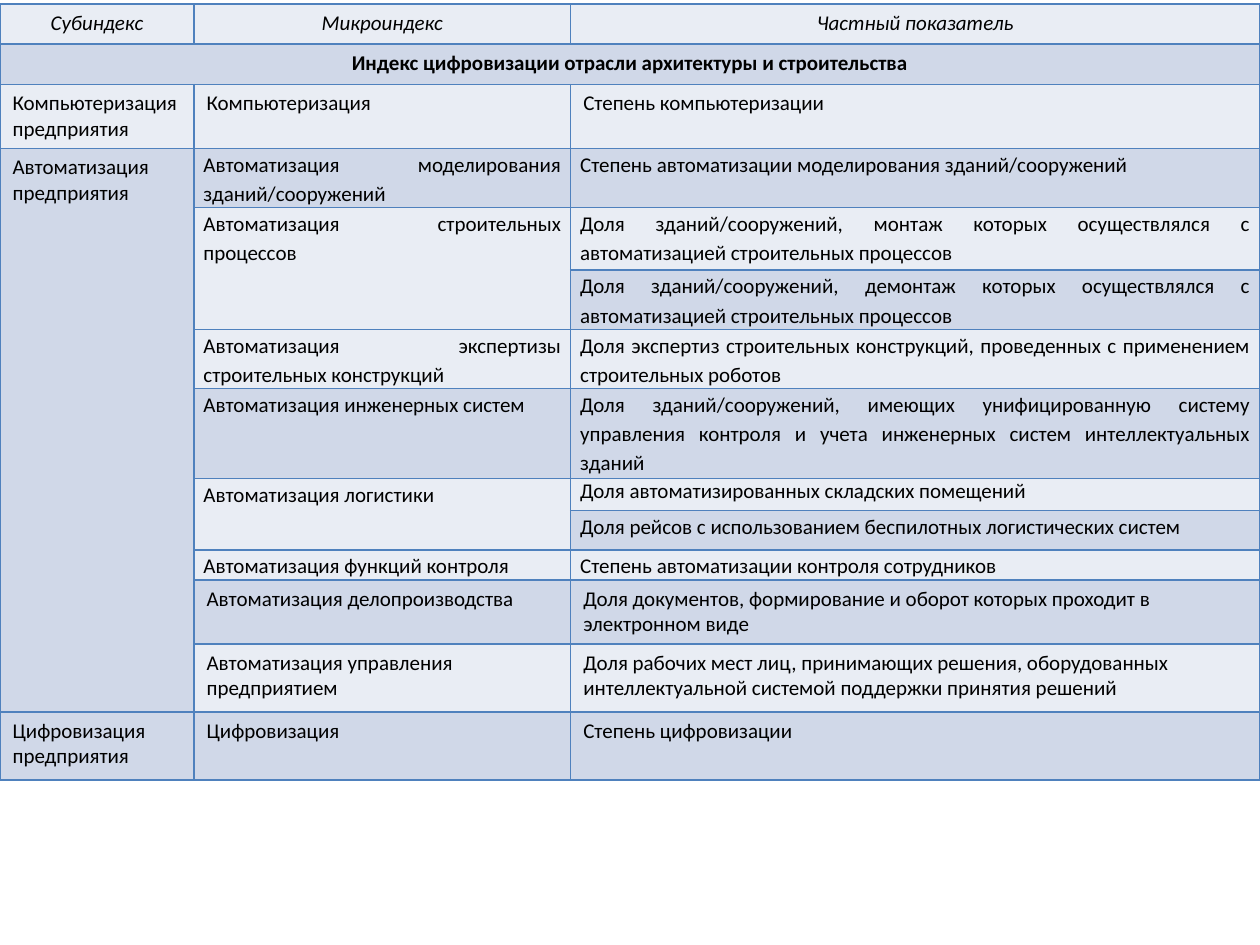
from dataclasses import dataclass
from typing import Optional

import pptx
import pptx.dml.color
import pptx.enum.text
import pptx.oxml
import pptx.oxml.ns
import pptx.util

Pt = pptx.util.Pt
ALIGN = pptx.enum.text.PP_ALIGN
COLORS = {"light": "E9EDF4", "dark": "D0D8E8", "border": "4F81BD", "text": "000000"}
COL_WIDTHS = [110.88, 215.28, 393.84]


@dataclass
class IndexRow:
    height: float
    texts: tuple[Optional[str], Optional[str], Optional[str]]  # None: covered by a merge
    compact: bool = False


ROWS = [
    IndexRow(23, ("Субиндекс", "Микроиндекс", "Частный показатель")),
    IndexRow(23.2, ("Индекс цифровизации отрасли архитектуры и строительства", None, None)),
    IndexRow(36.6, ("Компьютеризация предприятия", "Компьютеризация", "Степень компьютеризации")),
    IndexRow(33.4, ("Автоматизация предприятия", "Автоматизация моделирования зданий/сооружений",
                    "Степень автоматизации моделирования зданий/сооружений"), True),
    IndexRow(35.8, (None, "Автоматизация строительных процессов",
                    "Доля зданий/сооружений, монтаж которых осуществлялся с автоматизацией "
                    "строительных процессов"), True),
    IndexRow(33.8, (None, None,
                    "Доля зданий/сооружений, демонтаж которых осуществлялся с автоматизацией "
                    "строительных процессов"), True),
    IndexRow(33.7, (None, "Автоматизация экспертизы строительных конструкций",
                    "Доля экспертиз строительных конструкций, проведенных с применением "
                    "строительных роботов"), True),
    IndexRow(51.6, (None, "Автоматизация инженерных систем",
                    "Доля зданий/сооружений, имеющих унифицированную систему управления контроля "
                    "и учета инженерных систем интеллектуальных зданий"), True),
    IndexRow(18.4, (None, "Автоматизация логистики",
                    "Доля автоматизированных складских помещений"), True),
    IndexRow(22.4, (None, None,
                    "Доля рейсов с использованием беспилотных логистических систем"), True),
    IndexRow(17.2, (None, "Автоматизация функций контроля",
                    "Степень автоматизации контроля сотрудников"), True),
    IndexRow(36.4, (None, "Автоматизация делопроизводства",
                    "Доля документов, формирование и оборот которых проходит в электронном виде")),
    IndexRow(38.9, (None, "Автоматизация управления предприятием",
                    "Доля рабочих мест лиц, принимающих решения, оборудованных интеллектуальной "
                    "системой поддержки принятия решений")),
    IndexRow(38.9, ("Цифровизация предприятия", "Цифровизация", "Степень цифровизации")),
]
MERGES = [((1, 0), (1, 2)), ((3, 0), (12, 0)), ((4, 1), (5, 1)), ((8, 1), (9, 1))]
PLAIN_CELL = (8, 2)  # compact, but left-aligned with single spacing


def rgb(name: str) -> pptx.dml.color.RGBColor:
    return pptx.dml.color.RGBColor.from_string(COLORS[name])


def add_borders(cell) -> None:
    tc_pr = cell._tc.get_or_add_tcPr()
    for side in ("lnL", "lnR", "lnT", "lnB"):
        tc_pr.append(pptx.oxml.parse_xml(
            f'<a:{side} {pptx.oxml.ns.nsdecls("a")} w="{Pt(1)}"><a:solidFill>'
            f'<a:srgbClr val="{COLORS["border"]}"/></a:solidFill></a:{side}>'))


def fill_cell(cell, row: IndexRow, i: int, j: int) -> None:
    add_borders(cell)
    cell.fill.solid()
    cell.fill.fore_color.rgb = rgb("dark" if i % 2 else "light")
    compact = row.compact and j > 0
    cell.margin_left = cell.margin_right = Pt(5.4 if compact else 7.2)
    cell.margin_top = cell.margin_bottom = Pt(0 if compact else 3.6)
    if row.texts[j] is None:
        return

    p = cell.text_frame.paragraphs[0]
    p.text = row.texts[j]
    if i < 2:
        p.alignment = ALIGN.CENTER
    elif compact and (i, j) != PLAIN_CELL:
        p.alignment = ALIGN.JUSTIFY
        p.line_spacing = 1.15
    font = p.runs[0].font
    font.name = "Calibri"
    font.size = Pt(12)
    font.bold = i == 1
    font.italic = i == 0
    font.color.rgb = rgb("text")


def main() -> None:
    prs = pptx.Presentation()
    prs.slide_width, prs.slide_height = Pt(720), Pt(540)
    s = prs.slides.add_slide(prs.slide_layouts[6])

    # Table grid
    height = sum(row.height for row in ROWS)
    table = s.shapes.add_table(len(ROWS), len(COL_WIDTHS), Pt(0), Pt(2.2),
                               Pt(720), Pt(height)).table
    for col, width in zip(table.columns, COL_WIDTHS):
        col.width = Pt(width)

    # Cell text and formatting
    for i, row in enumerate(ROWS):
        table.rows[i].height = Pt(row.height)
        for j in range(len(COL_WIDTHS)):
            fill_cell(table.cell(i, j), row, i, j)

    # Merged cells
    for first, last in MERGES:
        table.cell(*first).merge(table.cell(*last))

    prs.save("out.pptx")


if __name__ == "__main__":
    main()
